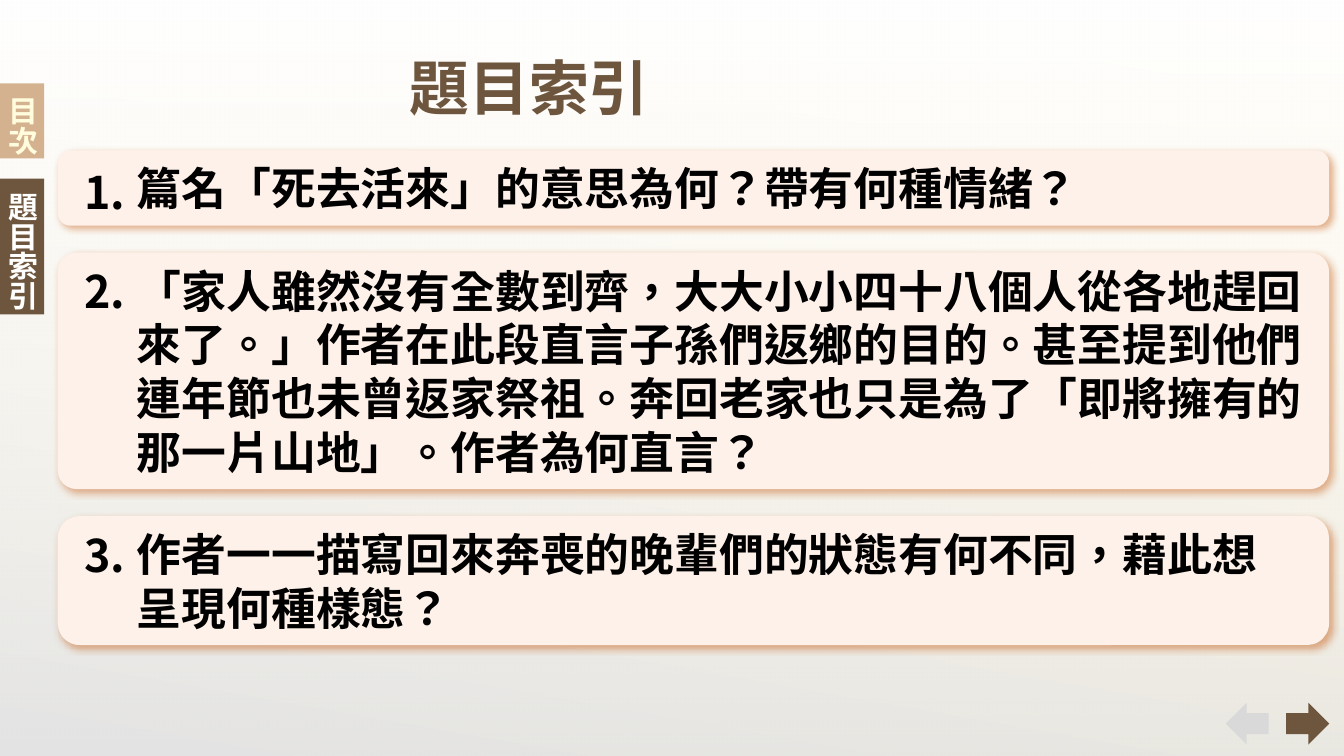
from lxml import etree
from pptx import Presentation
from pptx.dml.color import RGBColor
from pptx.enum import shapes, text
from pptx.oxml import ns, parse_xml
from pptx.util import Inches, Pt

FONT = "Noto Sans CJK SC"
COLORS = {
    "grey": "D9D9D9", "sand": "FFF2CC", "white": "FFFFFF", "card": "FDF1E9",
    "shadow": "C55A11", "brown": "6E563E", "tan": "D5B28F", "cream": "FFFDDE",
    "black": "000000",
}
QUESTIONS = [
    ((0.43, 1.12, 9.46, 0.56), 0.17, 8.77, 0.06,
     "篇名「死去活來」的意思為何？帶有何種情緒？"),
    ((0.43, 1.88, 9.46, 1.76), 0.08, 8.89, 0.03,
     "「家人雖然沒有全數到齊，大大小小四十八個人從各地趕回來了。」"
     "作者在此段直言子孫們返鄉的目的。甚至提到他們連年節也未曾返家祭祖。"
     "奔回老家也只是為了「即將擁有的那一片山地」。作者為何直言？"),
    ((0.43, 3.84, 9.46, 0.96), 0.17, 8.66, 0.04,
     "作者一一描寫回來奔喪的晚輩們的狀態有何不同，藉此想呈現何種樣態？"),
]


def add_block(s, kind, box, color):
    """Add a borderless shape with a plain fill."""
    sp = s.shapes.add_shape(kind, *map(Inches, box))
    sp.shadow.inherit = False
    sp.fill.solid()
    sp.fill.fore_color.rgb = RGBColor.from_string(COLORS[color])
    sp.line.fill.background()
    return sp


def write(sp, words, size, color):
    """Write one bold left-aligned Traditional Chinese paragraph and return it."""
    p = sp.text_frame.paragraphs[0]
    p.text = words
    p.alignment = text.PP_ALIGN.LEFT
    font = p.runs[0].font
    font.name, font.size, font.bold = FONT, Pt(size), True
    font.color.rgb = RGBColor.from_string(COLORS[color])
    font._element.set("lang", "zh-TW")
    ea = etree.SubElement(font._element, ns.qn("a:ea"))
    ea.set("typeface", FONT)
    return p


def add_text(s, box, words, size, color):
    """Add a wrapping text box and return its paragraph."""
    sp = s.shapes.add_textbox(*map(Inches, box))
    sp.text_frame.word_wrap = True
    return write(sp, words, size, color)


def add_backdrop(s, box, start, end, angle, alpha=100):
    """Add a gradient panel whose first stop may be translucent."""
    sp = add_block(s, shapes.MSO_SHAPE.RECTANGLE, box, end)
    grad = parse_xml(
        f'<a:gradFill {ns.nsdecls("a")} rotWithShape="1"><a:gsLst>'
        f'<a:gs pos="0"><a:srgbClr val="{COLORS[start]}">'
        f'<a:alpha val="{alpha * 1000}"/></a:srgbClr></a:gs>'
        f'<a:gs pos="100000"><a:srgbClr val="{COLORS[end]}"/></a:gs>'
        f'</a:gsLst><a:lin ang="{angle * 60000}" scaled="0"/></a:gradFill>')
    fill = sp._element.spPr.find(ns.qn("a:solidFill"))
    fill.getparent().replace(fill, grad)


def add_question(s, box, radius, width, drop, number, words):
    """Add a shadowed card with a number and its question."""
    x, y, _, _ = box
    sp = add_block(s, shapes.MSO_SHAPE.ROUNDED_RECTANGLE, box, "card")
    sp.adjustments[0] = radius
    effects = sp._element.spPr.find(ns.qn("a:effectLst"))
    effects.append(parse_xml(
        f'<a:outerShdw {ns.nsdecls("a")} blurRad="{Pt(4)}" dist="{Pt(2)}" '
        f'dir="{45 * 60000}" algn="tl" rotWithShape="0">'
        f'<a:srgbClr val="{COLORS["shadow"]}"><a:alpha val="47000"/>'
        '</a:srgbClr></a:outerShdw>'))
    p = add_text(s, (x + 0.49, y + 0.03, width, 0.5), words, 24, "black")
    p.space_before = Pt(12)
    add_text(s, (x + 0.1, y + drop, 0.51, 0.5), f"{number}.", 24, "black")


def add_title(s, box):
    """Add the slide title."""
    p = add_text(s, box, "題目索引", 32, "brown")
    p.alignment = text.PP_ALIGN.JUSTIFY
    p.line_spacing = 1.2


def add_tab(s, box, words, fill, color):
    """Add a side tab with vertical lettering."""
    sp = add_block(s, shapes.MSO_SHAPE.RECTANGLE, box, fill)
    tf = sp.text_frame
    tf.word_wrap = False
    tf.vertical_anchor = text.MSO_ANCHOR.MIDDLE
    tf._txBody.bodyPr.set("vert", "eaVert")
    write(sp, words, 16, color)


def add_arrows(s, box):
    """Add the next and previous arrows at both ends of the box."""
    x, y, w, h = box
    size = (0.32, h)
    add_block(s, shapes.MSO_SHAPE.RIGHT_ARROW, (x + w - 0.32, y, *size), "brown")
    back = add_block(s, shapes.MSO_SHAPE.RIGHT_ARROW, (x, y, *size), "grey")
    back._element.spPr.xfrm.set("flipH", "1")


def main():
    """Build and save the question index slide."""
    prs = Presentation()
    prs.slide_width = Inches(10)
    prs.slide_height = prs.slide_width * 9 // 16
    s = prs.slides.add_slide(prs.slide_layouts[6])
    page = (0, 0, 10, 5.63)
    add_backdrop(s, page, "grey", "sand", 280)
    add_backdrop(s, page, "white", "white", 270, 27)
    for number, (box, radius, width, drop, words) in enumerate(QUESTIONS, 1):
        add_question(s, box, radius, width, drop, number, words)
    add_title(s, (2.95, 0.22, 4.1, 0.69))
    add_tab(s, (0, 0.62, 0.33, 0.56), "目次", "tan", "cream")
    add_tab(s, (0, 1.33, 0.33, 1.01), "題目索引", "brown", "white")
    add_arrows(s, (9.12, 5.23, 0.77, 0.31))
    prs.save("out.pptx")


if __name__ == "__main__":
    main()
